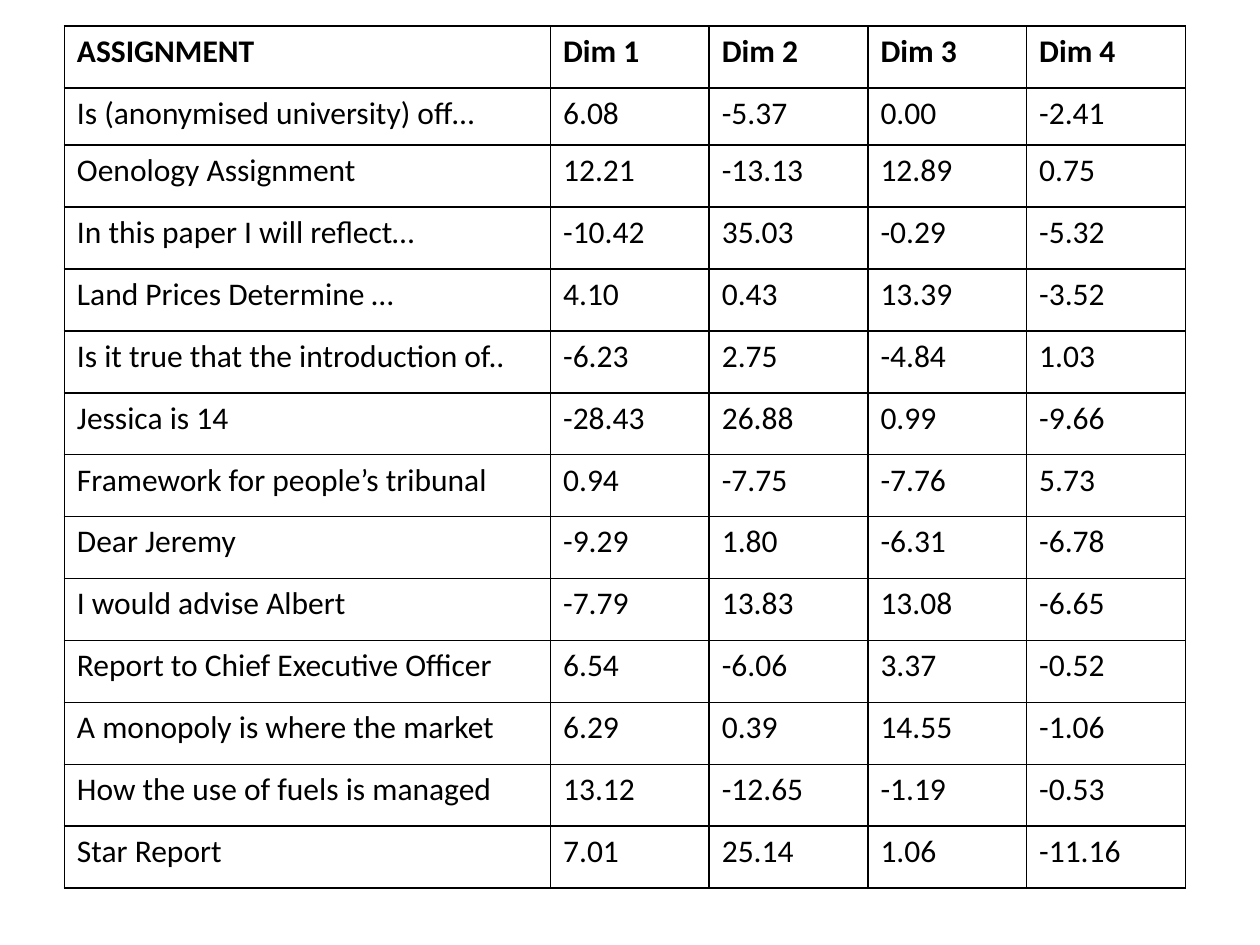
from lxml.etree import SubElement
from pptx import Presentation
from pptx.dml.color import RGBColor
from pptx.oxml.ns import qn
from pptx.util import Pt

BLACK = RGBColor(0x00, 0x00, 0x00)

HEADINGS = ("ASSIGNMENT", "Dim 1", "Dim 2", "Dim 3", "Dim 4")
SCORES = [
    ("Is (anonymised university) off…", 6.08, -5.37, 0.00, -2.41),
    ("Oenology Assignment", 12.21, -13.13, 12.89, 0.75),
    ("In this paper I will reflect…", -10.42, 35.03, -0.29, -5.32),
    ("Land Prices Determine …", 4.10, 0.43, 13.39, -3.52),
    ("Is it true that the introduction of..", -6.23, 2.75, -4.84, 1.03),
    ("Jessica is 14", -28.43, 26.88, 0.99, -9.66),
    ("Framework for people’s tribunal", 0.94, -7.75, -7.76, 5.73),
    ("Dear Jeremy", -9.29, 1.80, -6.31, -6.78),
    ("I would advise Albert", -7.79, 13.83, 13.08, -6.65),
    ("Report to Chief Executive Officer", 6.54, -6.06, 3.37, -0.52),
    ("A monopoly is where the market", 6.29, 0.39, 14.55, -1.06),
    ("How the use of fuels is managed", 13.12, -12.65, -1.19, -0.53),
    ("Star Report", 7.01, 25.14, 1.06, -11.16),
]
ASSIGNMENT_WIDTH, DIM_WIDTH = 277.8, 90.7
ROW_HEIGHT, FIRST_SCORE_HEIGHT = 35.4, 32.6


def add_borders(cell):
    properties = cell._tc.get_or_add_tcPr()
    for side in ("a:lnL", "a:lnR", "a:lnT", "a:lnB"):
        border = SubElement(properties, qn(side), w=str(Pt(1)))
        fill = SubElement(border, qn("a:solidFill"))
        SubElement(fill, qn("a:srgbClr"), val=str(BLACK))


prs = Presentation()
prs.slide_width, prs.slide_height = Pt(720), Pt(540)
slide = prs.slides.add_slide(prs.slide_layouts[6])

rows = [HEADINGS] + [
    (title, *(f"{score:.2f}" for score in scores)) for title, *scores in SCORES
]
widths = [ASSIGNMENT_WIDTH] + [DIM_WIDTH] * (len(HEADINGS) - 1)
heights = [ROW_HEIGHT] * len(rows)
heights[1] = FIRST_SCORE_HEIGHT

results = slide.shapes.add_table(
    len(rows), len(widths), Pt(36.8), Pt(15), Pt(sum(widths)), Pt(sum(heights))
).table
results.horz_banding = False
results.first_row = False
for column, width in zip(results.columns, widths):
    column.width = Pt(width)

for r, (row, height) in enumerate(zip(rows, heights)):
    results.rows[r].height = Pt(height)
    for c, value in enumerate(row):
        cell = results.cell(r, c)
        add_borders(cell)
        cell.fill.background()
        run = cell.text_frame.paragraphs[0].add_run()
        run.text = value
        run.font.name = "Calibri"
        run.font.size = Pt(18)
        run.font.bold = r == 0
        run.font.color.rgb = BLACK

prs.save("out.pptx")
